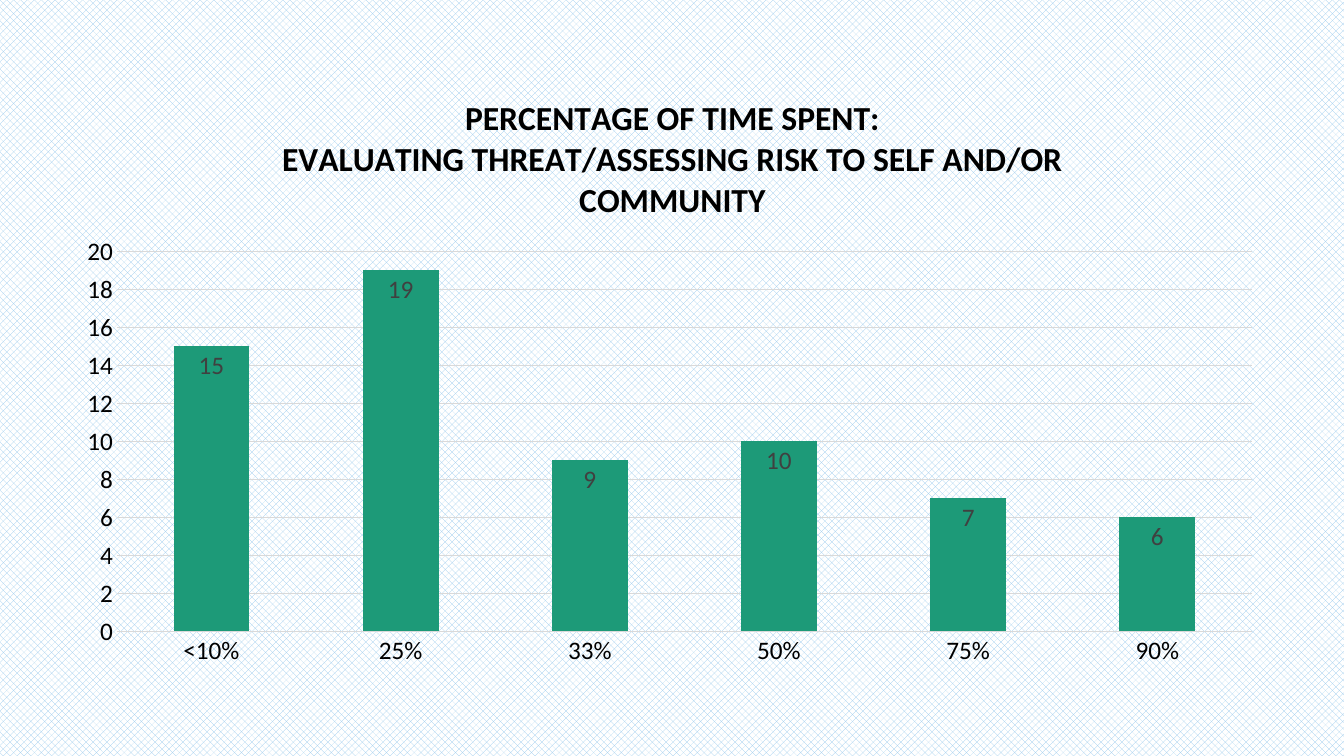
from dataclasses import dataclass
from typing import Any, Optional

from lxml import etree
from pptx import Presentation
from pptx.chart.data import CategoryChartData
from pptx.dml.color import RGBColor
from pptx.enum.chart import XL_CHART_TYPE, XL_LABEL_POSITION, XL_TICK_MARK
from pptx.enum.dml import MSO_PATTERN
from pptx.oxml.ns import qn
from pptx.util import Cm, Pt

COLUMNS = XL_CHART_TYPE.COLUMN_CLUSTERED
INSIDE_END = XL_LABEL_POSITION.INSIDE_END
NO_TICK = XL_TICK_MARK.NONE
HATCH = MSO_PATTERN.PERCENT_50


@dataclass(frozen=True)
class Theme:
    font: str = "Calibri"
    text: RGBColor = RGBColor(0x00, 0x00, 0x00)
    label: RGBColor = RGBColor(0x40, 0x40, 0x40)
    grid: RGBColor = RGBColor(0xD9, 0xD9, 0xD9)
    column: RGBColor = RGBColor(0x1D, 0x9A, 0x78)
    hatch: RGBColor = RGBColor(0x94, 0xC8, 0xED)
    paper: RGBColor = RGBColor(0xFF, 0xFF, 0xFF)
    base_size: Pt = Pt(10)
    axis_size: Pt = Pt(18)
    title_size: Pt = Pt(24)
    hairline: Pt = Pt(0.75)


@dataclass(frozen=True)
class AxisStyle:
    axis: Any
    line: Optional[RGBColor]
    gridlines: bool


@dataclass(frozen=True)
class Answer:
    share: str
    count: int


THEME = Theme()
TITLE_LINES = (
    "PERCENTAGE OF TIME SPENT:",
    "EVALUATING THREAT/ASSESSING RISK TO SELF AND/OR COMMUNITY",
)
ANSWERS = (
    Answer("<10%", 15),
    Answer("25%", 19),
    Answer("33%", 9),
    Answer("50%", 10),
    Answer("75%", 7),
    Answer("90%", 6),
)
# Plot area as fractions of the chart frame
PLOT_AREA = {"x": 0.04, "y": 0.29, "w": 0.94, "h": 0.63}


def apply_format(target: Any, values: dict[str, Any]) -> None:
    for attribute, value in values.items():
        setattr(target, attribute, value)


def style_font(font: Any, size: Pt, color: RGBColor, bold: bool = False) -> None:
    apply_format(font, {"name": THEME.font, "size": size, "bold": bold})
    font.color.rgb = color


def style_line(line: Any, color: Optional[RGBColor]) -> None:
    if color is None:
        line.fill.background()
    else:
        line.color.rgb = color
        line.width = THEME.hairline


def style_axis(style: AxisStyle) -> None:
    apply_format(style.axis, {
        "major_tick_mark": NO_TICK,
        "minor_tick_mark": NO_TICK,
        "has_major_gridlines": style.gridlines,
    })
    style_font(style.axis.tick_labels.font, THEME.axis_size, THEME.text)
    style_line(style.axis.format.line, style.line)
    if style.gridlines:
        style_line(style.axis.major_gridlines.format.line, THEME.grid)


def write_title(chart: Any) -> None:
    chart.has_title = True
    chart.chart_title.include_in_layout = False
    frame = chart.chart_title.text_frame
    for index, wording in enumerate(TITLE_LINES):
        paragraph = frame.add_paragraph() if index else frame.paragraphs[0]
        run = paragraph.add_run()
        run.text = wording
        style_font(run.font, THEME.title_size, THEME.text, bold=True)


def place_plot_area(chart: Any) -> None:
    plot_area = chart.element.find(qn("c:chart")).find(qn("c:plotArea"))
    layout = plot_area.find(qn("c:layout"))
    if layout is None:
        layout = etree.Element(qn("c:layout"))
        plot_area.insert(0, layout)
    manual = etree.SubElement(layout, qn("c:manualLayout"))
    settings = {"layoutTarget": "inner", "xMode": "edge", "yMode": "edge", **PLOT_AREA}
    for tag, value in settings.items():
        etree.SubElement(manual, qn(f"c:{tag}")).set("val", str(value))


def style_columns(plot: Any) -> None:
    apply_format(plot, {
        "gap_width": 150,
        "vary_by_categories": False,
        "has_data_labels": True,
    })
    apply_format(plot.data_labels, {"show_value": True, "position": INSIDE_END})
    style_font(plot.data_labels.font, THEME.axis_size, THEME.label)
    fill = plot.series[0].format.fill
    fill.solid()
    fill.fore_color.rgb = THEME.column


def add_time_chart(slide: Any) -> None:
    data = CategoryChartData()
    data.categories = [answer.share for answer in ANSWERS]
    data.add_series("Series 1", [answer.count for answer in ANSWERS])
    chart = slide.shapes.add_chart(
        COLUMNS, Cm(1.73), Cm(1.93), Cm(30.43), Cm(15.19), data
    ).chart
    chart.has_legend = False
    style_font(chart.font, THEME.base_size, THEME.text)
    write_title(chart)
    place_plot_area(chart)
    style_columns(chart.plots[0])

    # Both axes
    for style in (
        AxisStyle(chart.category_axis, THEME.grid, gridlines=False),
        AxisStyle(chart.value_axis, None, gridlines=True),
    ):
        style_axis(style)
    apply_format(chart.value_axis, {
        "minimum_scale": 0, "maximum_scale": 20, "major_unit": 2,
    })


def paint_background(slide: Any) -> None:
    fill = slide.background.fill
    fill.patterned()
    fill.pattern = HATCH
    fill.fore_color.rgb = THEME.hatch
    fill.back_color.rgb = THEME.paper


def main() -> None:
    deck = Presentation()
    apply_format(deck, {"slide_width": Cm(33.87), "slide_height": Cm(19.05)})
    slide = deck.slides.add_slide(deck.slide_layouts[6])
    paint_background(slide)
    add_time_chart(slide)
    deck.save("out.pptx")


if __name__ == "__main__":
    main()
